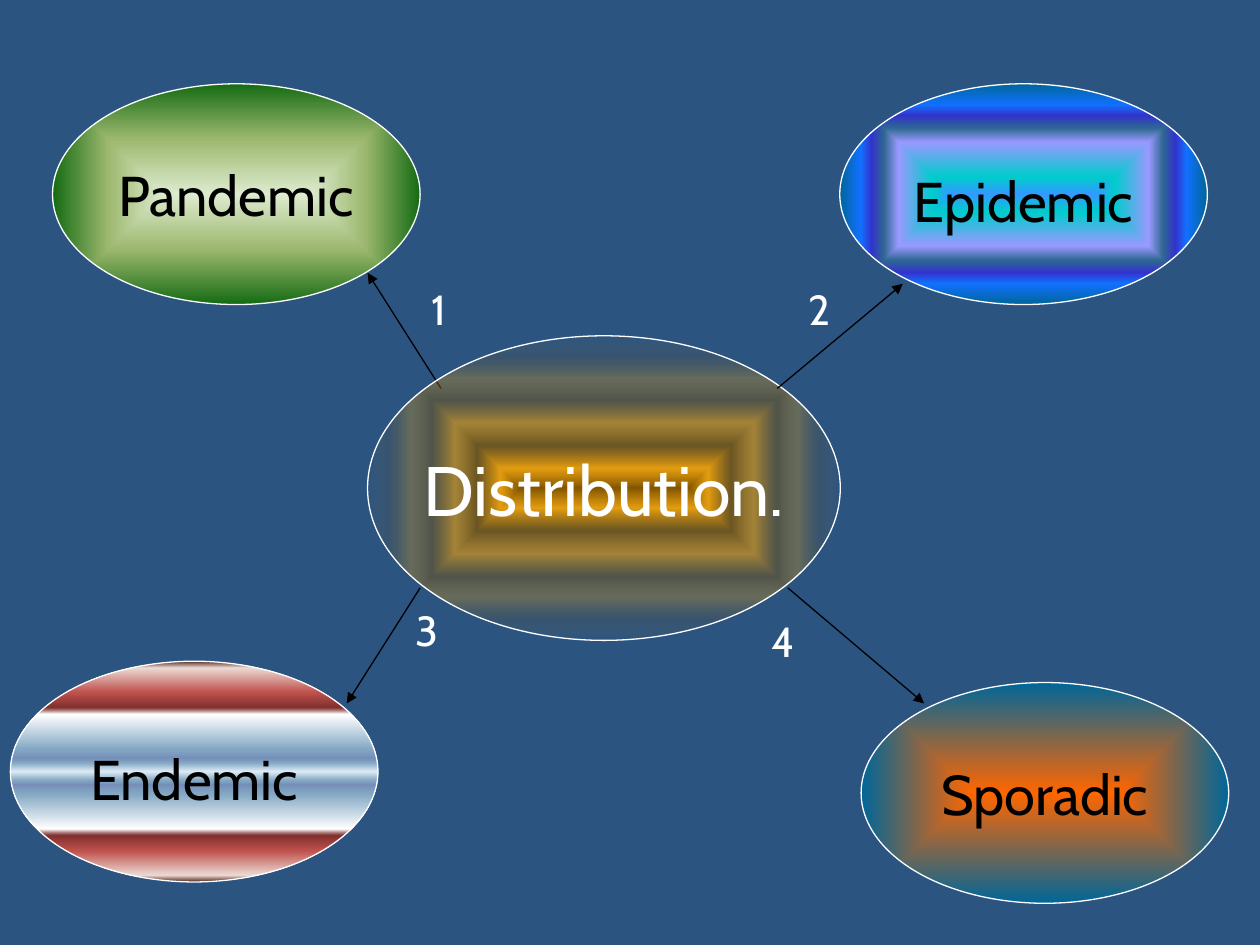
"""Build the slide on patterns of disease distribution."""
from lxml import etree
from pptx import Presentation
from pptx.dml.color import RGBColor
from pptx.enum.shapes import MSO_CONNECTOR, MSO_SHAPE
from pptx.enum.text import MSO_ANCHOR, PP_ALIGN
from pptx.oxml.ns import qn
from pptx.util import Cm, Pt

ELLIPSE = MSO_SHAPE.OVAL
STRAIGHT = MSO_CONNECTOR.STRAIGHT
MIDDLE = MSO_ANCHOR.MIDDLE
CENTER = PP_ALIGN.CENTER
LEFT = PP_ALIGN.LEFT

BACKGROUND = RGBColor(0x2B, 0x54, 0x81)
WHITE = RGBColor(0xFF, 0xFF, 0xFF)
BLACK = RGBColor(0x00, 0x00, 0x00)
FONT = "Cabin"
LINE_WIDTH = Pt(0.75)

OUTER_SIZE = (7.41, 4.45)
LABEL_SIZE = (0.97, 1.27)
INSET = 0.13
LOWERED_INSET = 0.38

BROWN = RGBColor(0x82, 0x56, 0x00)
AMBER = RGBColor(0xFF, 0xA8, 0x00)
GOLD_POSITIONS = (0, 13, 28, 43, 58, 72, 87, 100)
GOLD = [
    (position, (BROWN, AMBER)[index % 2], 100 - position)
    for index, position in enumerate(GOLD_POSITIONS)
]


def opaque(*stops):
    return [(position, RGBColor.from_string(color), 100) for position, color in stops]


GREEN = opaque((0, "DDEBCF"), (50, "9CB86E"), (100, "156B13"))
BLUE = opaque(
    (0, "3399FF"), (16, "00CCCC"), (47, "9999FF"), (60, "2E6792"),
    (71, "3333CC"), (81, "1170FF"), (100, "006699"),
)
ORANGE = opaque((0, "FF6600"), (100, "006699"))
HALF_BANDS = opaque(
    (0, "55261C"), (3, "EBDAD4"), (14, "C0524E"), (21, "80302D"), (22, "9C6563"),
    (24, "FFFFFF"), (40, "83A7C3"), (44, "768FB9"), (46, "83A7C3"),
)
BANDS = (
    HALF_BANDS
    + opaque((50, "DCEBF5"))
    + [(100 - position, color, alpha) for position, color, alpha in reversed(HALF_BANDS)]
)

HUB = ("Distribution.", (7.41, 6.77), (9.53, 6.14), GOLD, False, 40, WHITE, INSET)
PATTERNS = [
    ("Pandemic", (1.06, 1.69), OUTER_SIZE, GREEN, False, 32, BLACK, INSET),
    ("Endemic", (0.21, 13.33), OUTER_SIZE, BANDS, True, 32, BLACK, LOWERED_INSET),
    ("Epidemic", (16.93, 1.69), OUTER_SIZE, BLUE, False, 32, BLACK, LOWERED_INSET),
    ("Sporadic", (17.36, 13.76), OUTER_SIZE, ORANGE, False, 32, BLACK, INSET),
]
LEFT_ARROWS = [((8.47, 11.85), (6.99, 14.18)), ((8.89, 7.83), (7.41, 5.5))]
RIGHT_ARROWS = [((15.67, 7.83), (18.2, 5.72)), ((15.88, 11.85), (18.63, 14.18))]
LABELS = [("1", (8.44, 5.59)), ("2", (16.04, 5.59)), ("3", (8.13, 12.07)), ("4", (15.31, 12.28))]


def lengths(*pairs):
    return [Cm(value) for pair in pairs for value in pair]


def add_text(shape, text, size, color, alignment):
    frame = shape.text_frame
    frame.word_wrap = False
    paragraph = frame.paragraphs[0]
    paragraph.alignment = alignment
    run = paragraph.add_run()
    run.text = text
    run.font.name = FONT
    run.font.size = Pt(size)
    run.font.color.rgb = color


def set_gradient(shape, stops, linear):
    gradient = etree.Element(qn("a:gradFill"), rotWithShape="1")
    stop_list = etree.SubElement(gradient, qn("a:gsLst"))
    for position, color, alpha in stops:
        stop = etree.SubElement(stop_list, qn("a:gs"), pos=str(position * 1000))
        tint = etree.SubElement(stop, qn("a:srgbClr"), val=str(color))
        if alpha < 100:
            etree.SubElement(tint, qn("a:alpha"), val=str(alpha * 1000))
    if linear:
        etree.SubElement(gradient, qn("a:lin"), ang="5400000", scaled="1")
    else:
        focus = etree.SubElement(gradient, qn("a:path"), path="shape")
        middle = dict.fromkeys("ltrb", "50000")
        etree.SubElement(focus, qn("a:fillToRect"), **middle)
    shape._element.spPr.find(qn("a:prstGeom")).addnext(gradient)


def add_ellipse(slide, text, corner, size, stops, linear, font_size, color, inset):
    shape = slide.shapes.add_shape(ELLIPSE, *lengths(corner, size))
    shape.shadow.inherit = False
    set_gradient(shape, stops, linear)
    shape.line.color.rgb = WHITE
    shape.line.width = LINE_WIDTH
    shape.text_frame.vertical_anchor = MIDDLE
    shape.text_frame.margin_top = Cm(inset)
    add_text(shape, text, font_size, color, CENTER)


def add_arrow(slide, start, end):
    arrow = slide.shapes.add_connector(STRAIGHT, *lengths(start, end))
    arrow.line.color.rgb = BLACK
    arrow.line.width = LINE_WIDTH
    etree.SubElement(arrow.line._get_or_add_ln(), qn("a:tailEnd"), type="triangle")
    etree.SubElement(arrow._element.spPr, qn("a:effectLst"))


def main():
    presentation = Presentation()
    presentation.slide_width = Cm(25.4)
    presentation.slide_height = Cm(19.05)
    slide = presentation.slides.add_slide(presentation.slide_layouts[6])
    slide.background.fill.solid()
    slide.background.fill.fore_color.rgb = BACKGROUND

    for start, end in LEFT_ARROWS:
        add_arrow(slide, start, end)
    add_ellipse(slide, *HUB)
    for start, end in RIGHT_ARROWS:
        add_arrow(slide, start, end)
    for pattern in PATTERNS:
        add_ellipse(slide, *pattern)
    for text, corner in LABELS:
        label = slide.shapes.add_textbox(*lengths(corner, LABEL_SIZE))
        add_text(label, text, 24, WHITE, LEFT)

    presentation.save("out.pptx")


if __name__ == "__main__":
    main()
